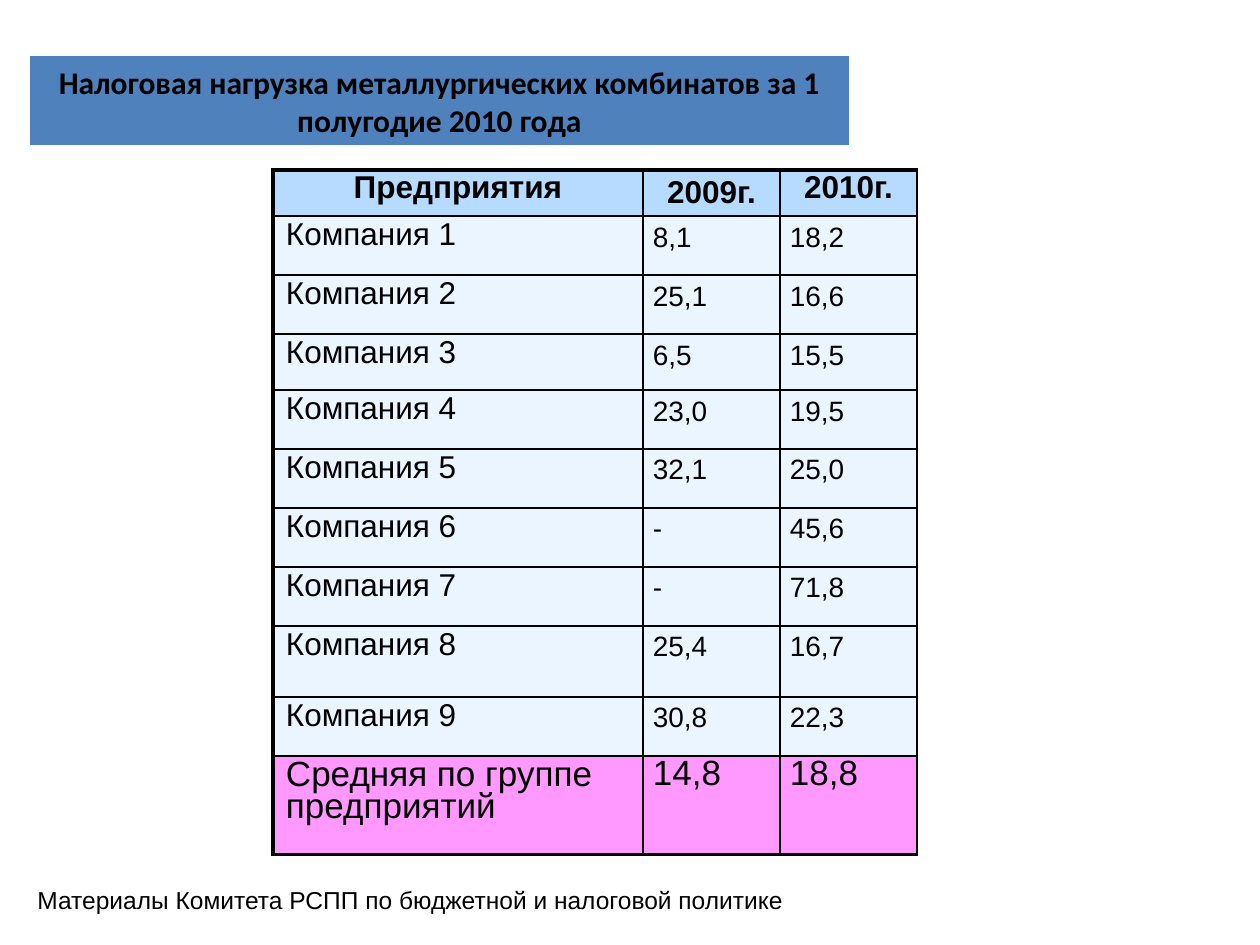
from lxml.etree import SubElement
from pptx import Presentation
from pptx.dml.color import RGBColor
from pptx.enum.text import MSO_ANCHOR, MSO_AUTO_SIZE, PP_ALIGN
from pptx.oxml.ns import qn
from pptx.util import Emu, Pt

TITLE = "Налоговая нагрузка металлургических комбинатов за 1 полугодие 2010 года"
SOURCE = "Материалы Комитета РСПП по бюджетной и налоговой политике"
HEADINGS = ("Предприятия", "2009г.", "2010г.")
COMPANIES = [
    ("Компания 1", "8,1", "18,2"),
    ("Компания 2", "25,1", "16,6"),
    ("Компания 3", "6,5", "15,5"),
    ("Компания 4", "23,0", "19,5"),
    ("Компания 5", "32,1", "25,0"),
    ("Компания 6", "-", "45,6"),
    ("Компания 7", "-", "71,8"),
    ("Компания 8", "25,4", "16,7"),
    ("Компания 9", "30,8", "22,3"),
]
AVERAGE = ("Средняя по группе предприятий", "14,8", "18,8")

BLACK = RGBColor(0x00, 0x00, 0x00)
TITLE_BLUE = RGBColor(0x4F, 0x81, 0xBD)
HEADING_BLUE = RGBColor(0xB7, 0xDB, 0xFF)
PALE_BLUE = RGBColor(0xEB, 0xF5, 0xFF)
PINK = RGBColor(0xFF, 0x99, 0xFF)

COLUMN_WIDTHS = (370, 137, 137)
ROW_HEIGHTS = (46, 59, 59, 56, 59, 59, 59, 59, 71, 59, 99)
THIN, THICK = 1, 2.25


def px(count):
    return Emu(round(count * 914400 / 126))


def write(frame, text, size, font="Arial", bold=False, align=PP_ALIGN.LEFT, spacing=1.0):
    frame.word_wrap = True
    paragraph = frame.paragraphs[0]
    paragraph.alignment = align
    paragraph.line_spacing = spacing
    run = paragraph.add_run()
    run.text = text
    run.font.name = font
    run.font.size = Pt(size)
    run.font.bold = bold
    run.font.color.rgb = BLACK


def place(shape, left, top, width, height):
    shape.left, shape.top = px(left), px(top)
    shape.width, shape.height = px(width), px(height)


def set_borders(cell, **widths):
    properties = cell._tc.get_or_add_tcPr()
    for position, side in enumerate("LRTB"):
        line = SubElement(properties, qn(f"a:ln{side}"), w=str(Pt(widths[side])))
        fill = SubElement(line, qn("a:solidFill"))
        SubElement(fill, qn("a:srgbClr"), val=str(BLACK))
        properties.insert(position, line)


def cell_format(row, column, last_row):
    if row == 0:
        spacing = 1.0 if column == 1 else 0.85
        text = dict(size=18, bold=True, align=PP_ALIGN.CENTER, spacing=spacing)
        return HEADING_BLUE, (13, 5, 13, 5), text
    if row == last_row:
        if column == 0:
            return PINK, (13, 6, 13, 6), dict(size=20, spacing=0.8)
        return PINK, (10, 3, 3, 3), dict(size=20, spacing=0.85)
    if column == 0:
        return PALE_BLUE, (13, 6, 13, 6), dict(size=18, spacing=0.85)
    return PALE_BLUE, (10, 10, 3, 3), dict(size=16, spacing=0.85)


def add_tax_table(slide):
    rows = [HEADINGS, *COMPANIES, AVERAGE]
    last_row = len(rows) - 1
    table = slide.shapes.add_table(
        len(rows), len(HEADINGS), px(273), px(170),
        px(sum(COLUMN_WIDTHS)), px(sum(ROW_HEIGHTS)),
    ).table
    table.first_row = table.horz_banding = False
    for column, width in zip(table.columns, COLUMN_WIDTHS):
        column.width = px(width)
    for row, height in zip(table.rows, ROW_HEIGHTS):
        row.height = px(height)
    for row, values in enumerate(rows):
        for column, value in enumerate(values):
            cell = table.cell(row, column)
            fill, margins, text = cell_format(row, column, last_row)
            cell.fill.solid()
            cell.fill.fore_color.rgb = fill
            (cell.margin_left, cell.margin_top,
             cell.margin_right, cell.margin_bottom) = map(px, margins)
            write(cell.text_frame, value, **text)
            set_borders(
                cell,
                L=THICK if column == 0 else THIN,
                R=THIN,
                T=THICK if row == 0 else THIN,
                B=THICK if row == last_row else THIN,
            )


def main():
    deck = Presentation()
    deck.slide_width, deck.slide_height = px(1260), px(945)
    slide = deck.slides.add_slide(deck.slide_layouts[5])

    title = slide.shapes.title
    place(title, 30, 56, 819, 89)
    title.fill.solid()
    title.fill.fore_color.rgb = TITLE_BLUE
    title.text_frame.auto_size = MSO_AUTO_SIZE.NONE
    title.text_frame.vertical_anchor = MSO_ANCHOR.MIDDLE
    write(title.text_frame, TITLE, 18, font="Calibri", bold=True, align=PP_ALIGN.CENTER)

    add_tax_table(slide)

    source = slide.shapes.add_textbox(px(25), px(879), px(1052), px(43))
    write(source.text_frame, SOURCE, 14)

    deck.save("out.pptx")


if __name__ == "__main__":
    main()
